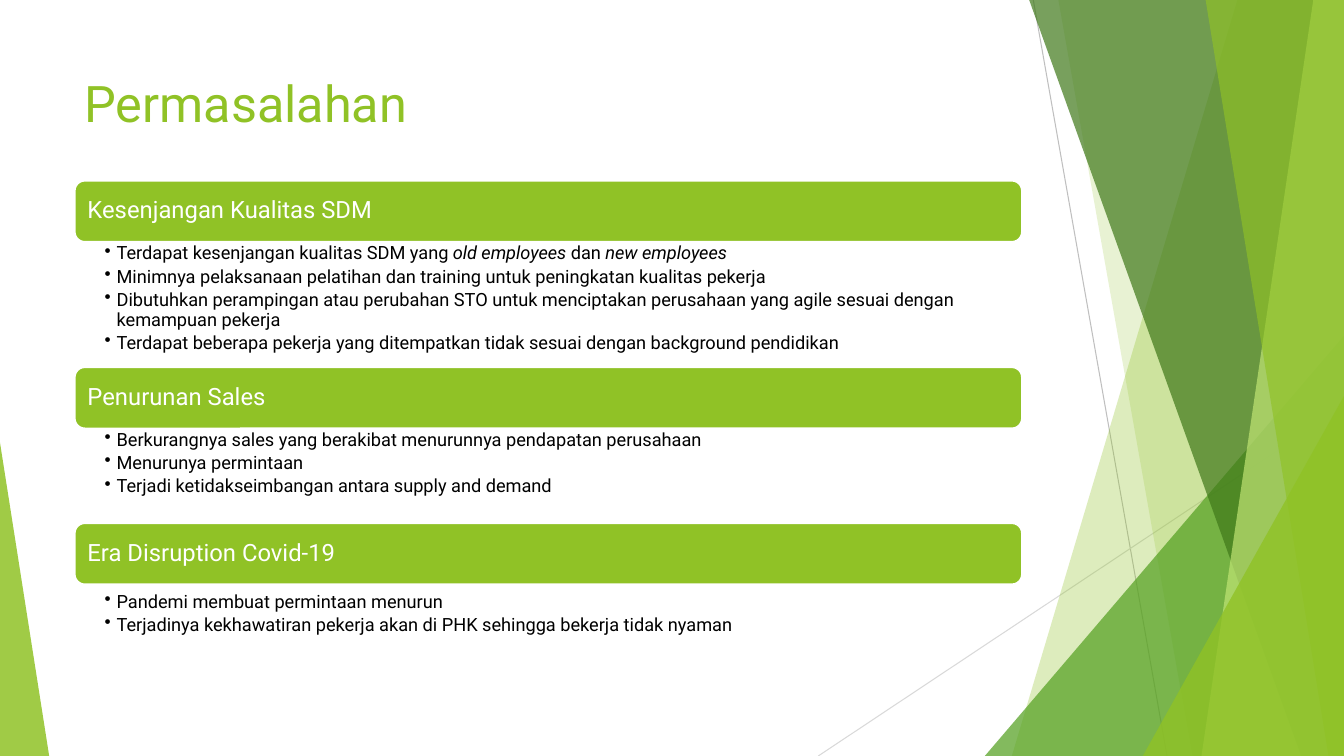
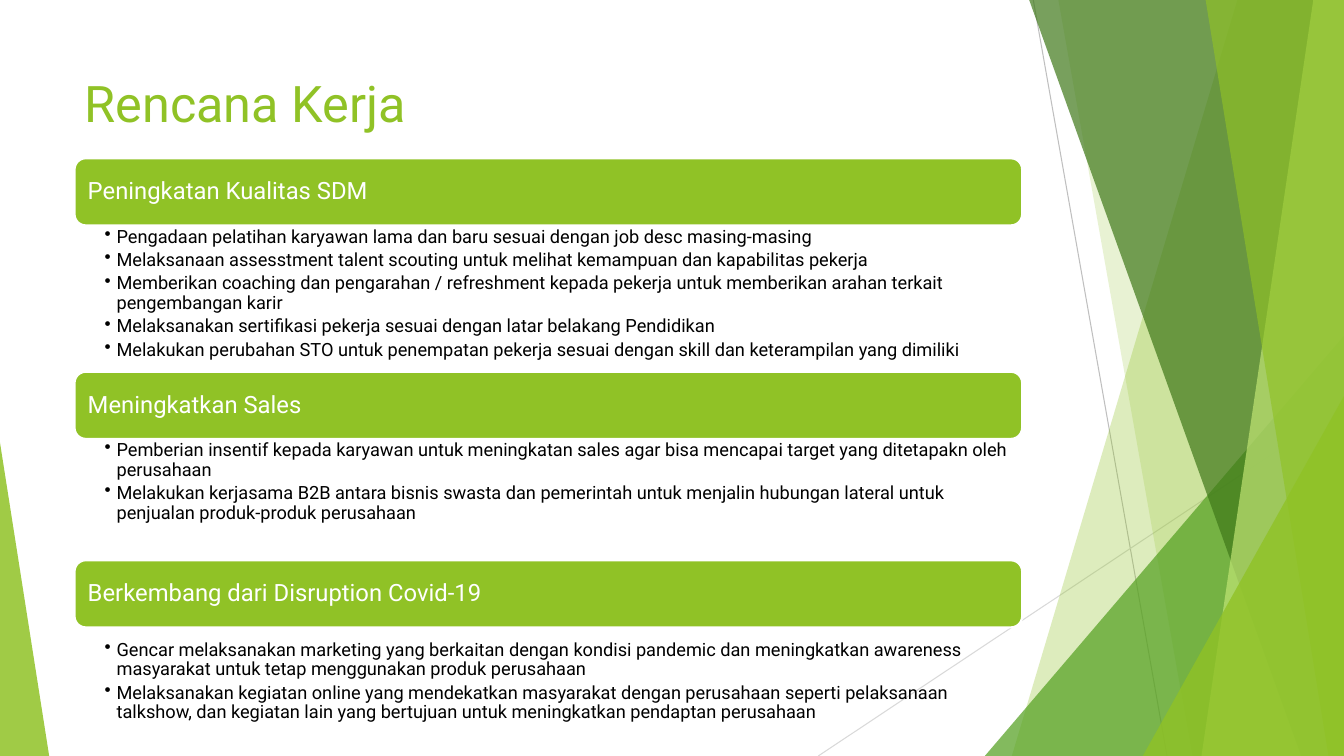
from lxml import etree
from pptx import Presentation
from pptx.dml.color import RGBColor
from pptx.enum import shapes, text
from pptx.oxml import ns
from pptx.util import Cm, Pt

# Sections: heading, band top, gap under band, height of bullets (cm), bullets.
# Words between asterisks are italic.
SLIDES = [
    {"title": "Permasalahan", "band_height": 1.55, "sections": [
        ("Kesenjangan Kualitas SDM", 4.55, 0, 2.84, [
            "Terdapat kesenjangan kualitas SDM yang *old employees* dan *new employees*",
            "Minimnya pelaksanaan pelatihan dan training untuk peningkatan kualitas pekerja",
            "Dibutuhkan perampingan atau perubahan STO untuk menciptakan perusahaan yang agile "
            "sesuai dengan kemampuan pekerja",
            "Terdapat beberapa pekerja yang ditempatkan tidak sesuai dengan background pendidikan",
        ]),
        ("Penurunan Sales", 9.25, 0, 2.62, [
            "Berkurangnya sales yang berakibat menurunnya pendapatan perusahaan",
            "Menurunya permintaan",
            "Terjadi ketidakseimbangan antara supply and demand",
        ]),
        ("Era Disruption Covid-19", 13.18, 0.15, 2.49, [
            "Pandemi membuat permintaan menurun",
            "Terjadinya kekhawatiran pekerja akan di PHK sehingga bekerja tidak nyaman",
        ]),
    ]},
    {"title": "Rencana Kerja", "band_height": 1.69, "sections": [
        ("Peningkatan Kualitas SDM", 3.99, 0, 3.68, [
            "Pengadaan pelatihan karyawan lama dan baru sesuai dengan job desc masing-masing",
            "Melaksanaan assesstment talent scouting untuk melihat kemampuan dan kapabilitas pekerja",
            "Memberikan coaching dan pengarahan / refreshment kepada pekerja untuk memberikan "
            "arahan terkait pengembangan karir",
            "Melaksanakan sertifikasi pekerja sesuai dengan latar belakang Pendidikan",
            "Melakukan perubahan STO untuk penempatan pekerja sesuai dengan skill dan "
            "keterampilan yang dimiliki",
        ]),
        ("Meningkatkan Sales", 9.37, 0, 4.04, [
            "Pemberian insentif kepada karyawan untuk meningkatan sales agar bisa mencapai target "
            "yang ditetapakn oleh perusahaan",
            "Melakukan kerjasama B2B antara bisnis swasta dan pemerintah untuk menjalin hubungan "
            "lateral untuk penjualan produk-produk perusahaan",
        ]),
        ("Berkembang dari Disruption Covid-19", 14.12, 0.28, 2.9, [
            "Gencar melaksanakan marketing yang berkaitan dengan kondisi pandemic dan "
            "meningkatkan awareness masyarakat untuk tetap menggunakan produk perusahaan",
            "Melaksanakan kegiatan online yang mendekatkan masyarakat dengan perusahaan seperti "
            "pelaksanaan talkshow, dan kegiatan lain yang bertujuan untuk meningkatkan pendaptan "
            "perusahaan",
        ]),
    ]},
]

WIDTH, HEIGHT = 33.87, 19.05
LEFT, CONTENT_WIDTH = 1.88, 23.88
GREEN, MID_GREEN, DARK_GREEN, PALE_GREEN = "90C226", "54A021", "3F7819", "C0E474"
WHITE, BLACK = "FFFFFF", "000000"

RAYS = [((26.04, 0), (29.41, HEIGHT), "BFBFBF"),
        ((WIDTH, 10.24), (20.62, HEIGHT), "D9D9D9")]
# Back to front. A facet runs from its slanted left edge to the right of the slide;
# a wedge is a right triangle standing on the bottom of the slide.
BACKDROP = [
    ("facet", (31.19, 25.5), GREEN, 30),
    ("facet", (26.67, 30.05), GREEN, 20),
    ("wedge", (24.82, 8.46, WIDTH - 24.82, 1), MID_GREEN, 72),
    ("facet", (25.93, 32.79), DARK_GREEN, 70),
    ("facet", (33.1, 30.28), PALE_GREEN, 70),
    ("facet", (30.38, 33.48), GREEN, 65),
    ("wedge", (28.8, 9.98, WIDTH - 28.8, 1), GREEN, 80),
    ("wedge", (0, 11.15, 1.24, 0), GREEN, 85),
]

TITLE_FONT = {"size": Pt(36), "color": GREEN}
BAND_FONT = {"size": Pt(17), "color": WHITE}
BULLET_FONT = {"size": Pt(13), "color": BLACK}
BAND_FRAME = {"word_wrap": True, "vertical_anchor": text.MSO_ANCHOR.MIDDLE,
              "margin_left": Cm(0.25), "margin_right": Cm(0.25)}
BULLET_FRAME = {"word_wrap": True, "margin_left": Cm(0.76), "margin_right": Cm(0.33),
                "margin_top": Cm(0.05), "margin_bottom": Cm(0.05)}
BULLET_PARAGRAPH = {"level": 1, "line_spacing": 0.9, "space_after": Pt(2.6)}


def rgb(value):
    return RGBColor.from_string(value)


def apply(target, values):
    for name, value in values.items():
        setattr(target, name, value)


def add_words(paragraph, words, font):
    """Add runs to the paragraph, with the parts between asterisks in italics."""
    paragraph.alignment = text.PP_ALIGN.LEFT
    for index, part in enumerate(words.split("*")):
        if part:
            run = paragraph.add_run()
            run.text = part
            apply(run.font, {"name": "Roboto", "size": font["size"], "italic": index % 2 == 1})
            run.font.color.rgb = rgb(font["color"])


def paint(shape, color, opacity=100):
    shape.shadow.inherit = False
    shape.fill.solid()
    shape.fill.fore_color.rgb = rgb(color)
    shape.line.fill.background()
    if opacity < 100:
        hue = shape.fill._xPr.find(".//" + ns.qn("a:srgbClr"))
        etree.SubElement(hue, ns.qn("a:alpha"), val=str(opacity * 1000))


def add_ray(slide, start, end, color):
    ray = slide.shapes.add_connector(shapes.MSO_CONNECTOR.STRAIGHT,
                                     *map(Cm, start + end))
    ray.line.color.rgb = rgb(color)
    ray.line.width = Pt(0.75)
    etree.SubElement(ray._element.spPr, ns.qn("a:effectLst"))


def add_facet(slide, top_x, bottom_x):
    outline = slide.shapes.build_freeform(Cm(top_x), Cm(-0.02))
    corners = [(WIDTH, -0.02), (WIDTH, HEIGHT), (bottom_x, HEIGHT)]
    outline.add_line_segments([(Cm(x), Cm(y)) for x, y in corners], close=True)
    return outline.convert_to_shape()


def add_wedge(slide, left, top, width, apex):
    wedge = slide.shapes.add_shape(shapes.MSO_SHAPE.ISOSCELES_TRIANGLE,
                                   *map(Cm, (left, top, width, HEIGHT - top)))
    wedge.adjustments[0] = apex
    return wedge


def add_backdrop(slide):
    for ray in RAYS:
        add_ray(slide, *ray)
    makers = {"facet": add_facet, "wedge": add_wedge}
    for kind, place, color, opacity in BACKDROP:
        paint(makers[kind](slide, *place), color, opacity)


def add_title(slide, title):
    frame = slide.shapes.add_textbox(*map(Cm, (LEFT, 1.7, CONTENT_WIDTH, 2))).text_frame
    frame.word_wrap = True
    add_words(frame.paragraphs[0], title, TITLE_FONT)


def add_band(slide, heading, top, height):
    band = slide.shapes.add_shape(shapes.MSO_SHAPE.ROUNDED_RECTANGLE,
                                  *map(Cm, (LEFT, top, CONTENT_WIDTH, height)))
    paint(band, GREEN)
    band.line.color.rgb = rgb(WHITE)
    band.line.width = Pt(1.5)
    apply(band.text_frame, BAND_FRAME)
    paragraph = band.text_frame.paragraphs[0]
    paragraph.line_spacing = 0.9
    add_words(paragraph, heading, BAND_FONT)


def add_bullets(slide, bullets, top, height):
    frame = slide.shapes.add_textbox(*map(Cm, (LEFT, top, CONTENT_WIDTH, height))).text_frame
    apply(frame, BULLET_FRAME)
    for index, bullet in enumerate(bullets):
        paragraph = frame.add_paragraph() if index else frame.paragraphs[0]
        apply(paragraph, BULLET_PARAGRAPH)
        add_words(paragraph, bullet, BULLET_FONT)
        properties = paragraph._p.get_or_add_pPr()
        properties.set("marL", str(Cm(0.3)))
        properties.set("indent", str(-Cm(0.3)))
        etree.SubElement(properties, ns.qn("a:buChar"), char="•")


def main():
    deck = Presentation()
    deck.slide_width, deck.slide_height = Cm(WIDTH), Cm(HEIGHT)
    for content in SLIDES:
        slide = deck.slides.add_slide(deck.slide_layouts[6])
        add_backdrop(slide)
        add_title(slide, content["title"])
        band_height = content["band_height"]
        for heading, top, gap, height, bullets in content["sections"]:
            add_band(slide, heading, top, band_height)
            add_bullets(slide, bullets, top + band_height + gap, height)
    deck.save("out.pptx")


if __name__ == "__main__":
    main()
